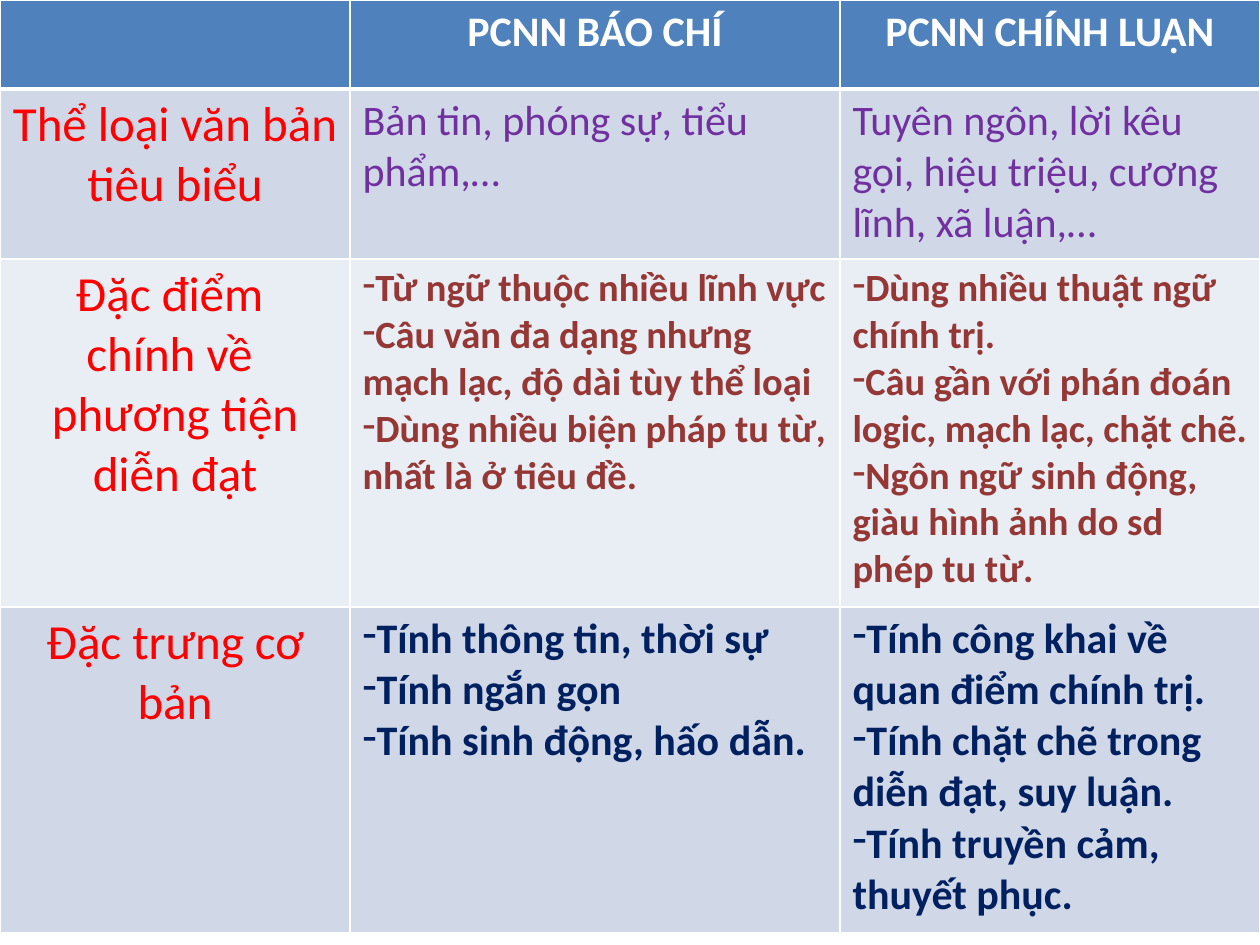
from dataclasses import dataclass

from lxml import etree
from pptx import Presentation
from pptx import util as u
from pptx.dml.color import RGBColor
from pptx.enum import text
from pptx.oxml import ns

SCALE = 914400 / 126  # EMU per px


@dataclass(frozen=True)
class Theme:
    font: str = "Calibri"
    header: str = "4F81BD"
    bands: tuple = ("D0D8E8", "E9EDF4")
    white: str = "FFFFFF"
    label: str = "FF0000"
    genre: str = "7030A0"
    means: str = "953735"
    trait: str = "002060"
    label_size: int = 28
    body_size: int = 24
    small_size: int = 22
    rule: int = 1
    header_rule: int = 3


def px(n):
    return u.Emu(round(n * SCALE))


def write(tf, lines, *, size, color, font, bold=False, center=False, dash=False):
    """Fill a text frame with one paragraph per line."""
    for i, line in enumerate(lines):
        p = tf.paragraphs[0] if i == 0 else tf.add_paragraph()
        p.alignment = text.PP_ALIGN.CENTER if center else text.PP_ALIGN.LEFT
        if dash:
            pPr = p._p.get_or_add_pPr()
            etree.SubElement(pPr, ns.qn("a:buFontTx"))
            etree.SubElement(pPr, ns.qn("a:buChar"), char="-")
        r = p.add_run()
        r.text = line
        r.font.name, r.font.size, r.font.bold = font, u.Pt(size), bold
        r.font.color.rgb = RGBColor.from_string(color)


class Deck:
    """Holds the theme and the current slide."""

    def __init__(self, theme, width, height):
        self.theme = theme
        self.prs = Presentation()
        self.prs.slide_width, self.prs.slide_height = px(width), px(height)
        self.s = self.prs.slides.add_slide(self.prs.slide_layouts[6])

    def border(self, cell, side, points):
        tcPr = cell._tc.get_or_add_tcPr()
        ln = etree.SubElement(tcPr, ns.qn(f"a:ln{side}"), w=str(u.Pt(points)))
        fill = etree.SubElement(ln, ns.qn("a:solidFill"))
        etree.SubElement(fill, ns.qn("a:srgbClr"), val=self.theme.white)

    def cell(self, cell, row, lines, **fmt):
        t = self.theme
        thick = {(0, "B"), (1, "T")}  # the rule under the header row
        for side in "LRTB":
            self.border(cell, side, t.header_rule if (row, side) in thick else t.rule)
        color = t.bands[(row - 1) % 2] if row else t.header
        cell.fill.solid()
        cell.fill.fore_color.rgb = RGBColor.from_string(color)
        write(cell.text_frame, lines, font=t.font, **fmt)

    def table(self, x, y, widths, heights, rows):
        """Each row is a list of texts per column and a list of formats per column."""
        frame = self.s.shapes.add_table(len(heights), len(widths), px(x), px(y),
                                        px(sum(widths)), px(sum(heights)))
        tbl = frame.table
        for col, w in zip(tbl.columns, widths):
            col.width = px(w)
        for row, h in zip(tbl.rows, heights):
            row.height = px(h)
        for i, (texts, formats) in enumerate(rows):
            for j, (lines, fmt) in enumerate(zip(texts, formats)):
                self.cell(tbl.cell(i, j), i, lines, **fmt)


def main():
    t = Theme()
    deck = Deck(t, 1260, 945)
    header = dict(size=t.body_size, color=t.white, bold=True, center=True)
    label = dict(size=t.label_size, color=t.label, center=True)
    genre = dict(size=t.body_size, color=t.genre)
    means = dict(size=t.small_size, color=t.means, bold=True, dash=True)
    trait = dict(size=t.body_size, color=t.trait, bold=True, dash=True)
    rows = [
        ([[], ["PCNN BÁO CHÍ"], ["PCNN CHÍNH LUẬN"]], [header] * 3),
        ([["Thể loại văn bản tiêu biểu"],
          ["Bản tin, phóng sự, tiểu phẩm,…"],
          ["Tuyên ngôn, lời kêu gọi, hiệu triệu, cương lĩnh, xã luận,…"]],
         [label, genre, genre]),
        ([["Đặc điểm ", "chính về  phương tiện diễn đạt"],
          ["Từ ngữ thuộc nhiều lĩnh vực",
           "Câu văn đa dạng nhưng mạch lạc, độ dài tùy thể loại",
           "Dùng nhiều biện pháp tu từ, nhất là ở tiêu đề."],
          ["Dùng nhiều thuật ngữ chính trị.",
           "Câu gần với phán đoán logic, mạch lạc, chặt chẽ.",
           "Ngôn ngữ sinh động, giàu hình ảnh do sd phép tu từ."]],
         [label, means, means]),
        ([["Đặc trưng cơ bản"],
          ["Tính thông tin, thời sự", "Tính ngắn gọn", "Tính sinh động, hấo dẫn."],
          ["Tính công khai về quan điểm chính trị.",
           "Tính chặt chẽ trong diễn đạt, suy luận.",
           "Tính truyền cảm, thuyết phục."]],
         [label, trait, trait]),
    ]
    deck.table(0, 0, [350, 490, 420], [89, 170, 348, 326], rows)
    deck.prs.save("out.pptx")


if __name__ == "__main__":
    main()
